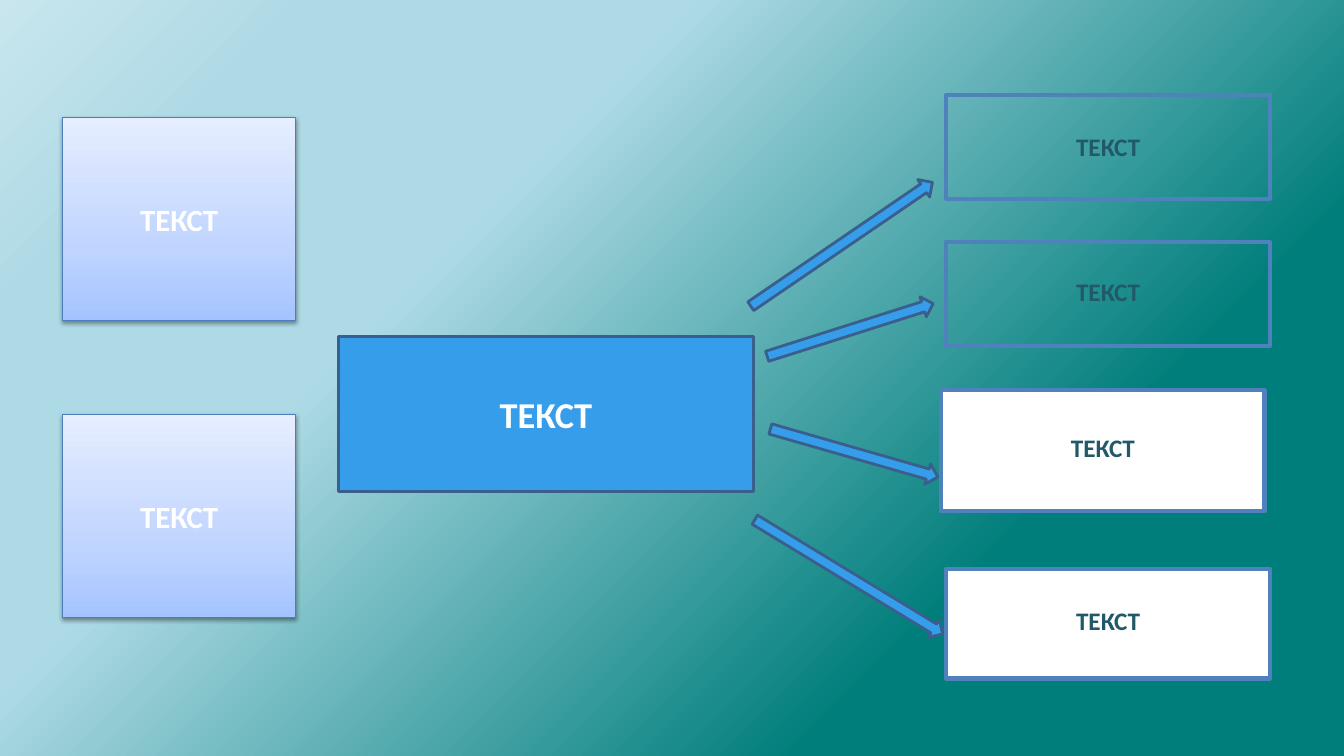
from dataclasses import dataclass

from lxml.etree import SubElement
from pptx import Presentation
from pptx.dml.color import RGBColor
from pptx.enum.shapes import MSO_SHAPE as Preset
from pptx.enum.text import MSO_ANCHOR as Anchor, PP_ALIGN as Align
from pptx.oxml.ns import qn
from pptx.util import Cm, Pt


@dataclass(frozen=True)
class Theme:
    font: str = "Calibri"
    white: str = "FFFFFF"
    ink: str = "215968"
    accent: str = "369DEA"
    accent_line: str = "3A5F8C"
    outcome_line: str = "4F81BD"
    source_line: str = "4B7EBC"
    shadow: str = "000000"
    backdrop: tuple = ((26, "007E7B"), (67, "AEDAE5"), (85, "AEDAE5"), (100, "C9E6EE"))
    source_fill: tuple = ((0, "A4C4FF"), (35, "BFD4FF"), (100, "E6EEFF"))
    outcome_size: int = 18
    source_size: int = 22
    center_size: int = 26


class SlideBuilder:
    def __init__(self, page, theme):
        self.page = page
        self.theme = theme

    def gradient(self, fill, element, stops, angle):
        fill.gradient()
        fill.gradient_angle = angle
        stop_list = element.find(".//" + qn("a:gsLst"))
        for stop in list(stop_list):
            stop_list.remove(stop)
        for position, color in stops:
            stop = SubElement(stop_list, qn("a:gs"), pos=str(position * 1000))
            SubElement(stop, qn("a:srgbClr"), val=color)

    def backdrop(self):
        self.gradient(self.page.background.fill, self.page.element, self.theme.backdrop, 135)

    def shape(self, preset, place, line, width, fill=None):
        shape = self.page.shapes.add_shape(preset, *map(Cm, place))
        shape.shadow.inherit = False
        shape.line.color.rgb = RGBColor.from_string(line)
        shape.line.width = Pt(width)
        if fill:
            shape.fill.solid()
            shape.fill.fore_color.rgb = RGBColor.from_string(fill)
        else:
            shape.fill.background()
        return shape

    def label(self, box, text, size, color, spacing=None):
        frame = box.text_frame
        frame.word_wrap = True
        frame.vertical_anchor = Anchor.MIDDLE
        frame.text = text
        para = frame.paragraphs[0]
        para.alignment = Align.CENTER
        para.line_spacing = spacing
        font = para.runs[0].font
        font.name = self.theme.font
        font.size = Pt(size)
        font.bold = True
        font.color.rgb = RGBColor.from_string(color)

    def drop_shadow(self, box):
        effects = box.element.spPr.find(qn("a:effectLst"))
        shadow = SubElement(effects, qn("a:outerShdw"), blurRad=str(Pt(3.1)),
                            dist=str(Pt(1.6)), dir="5400000", rotWithShape="0")
        color = SubElement(shadow, qn("a:srgbClr"), val=self.theme.shadow)
        SubElement(color, qn("a:alpha"), val="38000")

    def source(self, text, top):
        box = self.shape(Preset.RECTANGLE, (1.57, top, 5.89, 5.13), self.theme.source_line, 0.75)
        self.gradient(box.fill, box.element, self.theme.source_fill, 90)
        self.drop_shadow(box)
        self.label(box, text, self.theme.source_size, self.theme.white)

    def center(self, text):
        box = self.shape(Preset.RECTANGLE, (8.53, 8.48, 10.46, 3.91),
                         self.theme.accent_line, 2, self.theme.accent)
        self.label(box, text, self.theme.center_size, self.theme.white)

    def outcome(self, text, left, top, height, fill, spacing):
        box = self.shape(Preset.RECTANGLE, (left, top, 8.15, height),
                         self.theme.outcome_line, 3, fill)
        self.label(box, text, self.theme.outcome_size, self.theme.ink, spacing)

    def arrow(self, left, top, length, rotation):
        arrow = self.shape(Preset.RIGHT_ARROW, (left, top, length, 0.53),
                           self.theme.accent_line, 2, self.theme.accent)
        arrow.rotation = rotation


def main():
    deck = Presentation()
    deck.slide_width, deck.slide_height = Cm(33.87), Cm(19.05)
    theme = Theme()
    slide = SlideBuilder(deck.slides.add_slide(deck.slide_layouts[6]), theme)
    text = "ТЕКСТ"

    slide.backdrop()
    for left, top, height, fill, spacing in (
        (23.85, 14.33, 2.77, theme.white, 0.8),
        (23.72, 9.83, 3.05, theme.white, 0.8),
        (23.85, 6.1, 2.62, None, 0.8),
        (23.85, 2.39, 2.62, None, None),
    ):
        slide.outcome(text, left, top, height, fill, spacing)
    slide.center(text)
    for top in (10.44, 2.95):
        slide.source(text, top)
    for left, top, length, rotation in (
        (18.44, 5.89, 5.54, 325.7),
        (18.62, 14.27, 5.54, 31.3),
        (19.23, 8.05, 4.39, 342.4),
        (19.33, 11.15, 4.39, 16),
    ):
        slide.arrow(left, top, length, rotation)

    deck.save("out.pptx")


if __name__ == "__main__":
    main()
